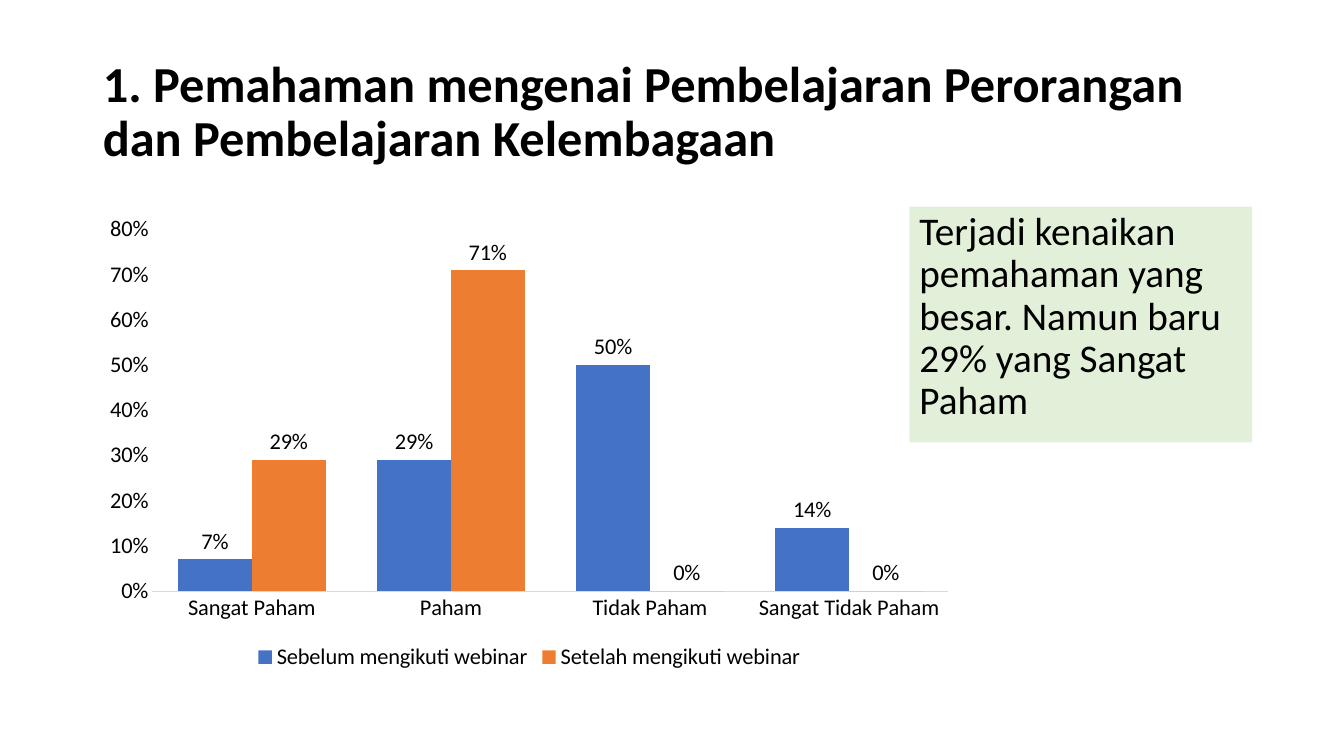
from dataclasses import dataclass

import pptx
import pptx.chart.data
import pptx.dml.color
import pptx.enum.chart
import pptx.enum.text
import pptx.oxml
import pptx.oxml.ns
import pptx.util

SLIDE_WIDTH = pptx.util.Inches(13.33)
SLIDE_HEIGHT = pptx.util.Inches(7.5)


@dataclass(frozen=True)
class Theme:
    font: str = "Calibri"
    text: str = "000000"
    note_fill: str = "E2F0D9"
    axis_line: str = "D9D9D9"
    title_size: int = 36
    note_size: int = 28
    chart_size: int = 16


@dataclass(frozen=True)
class Area:
    """A rectangle in percent of the slide's width and height."""
    left: float
    top: float
    width: float
    height: float

    def lengths(self) -> tuple[int, int, int, int]:
        return (
            round(SLIDE_WIDTH * self.left / 100),
            round(SLIDE_HEIGHT * self.top / 100),
            round(SLIDE_WIDTH * self.width / 100),
            round(SLIDE_HEIGHT * self.height / 100),
        )


@dataclass(frozen=True)
class Survey:
    name: str
    shares: tuple[float, ...]
    color: str


THEME = Theme()
TITLE_AREA = Area(6.9, 5.33, 86.27, 19.33)
CHART_AREA = Area(6.9, 27.33, 64.97, 62)
NOTE_AREA = Area(67.67, 27.33, 25.5, 31.2)

TITLE = "1. Pemahaman mengenai Pembelajaran Perorangan dan Pembelajaran Kelembagaan"
NOTE = "Terjadi kenaikan pemahaman yang besar. Namun baru 29% yang Sangat Paham"
LEVELS = ("Sangat Paham", "Paham", "Tidak Paham", "Sangat Tidak Paham")
SURVEYS = (
    Survey("Sebelum mengikuti webinar", (0.07, 0.29, 0.5, 0.14), "4472C4"),
    Survey("Setelah mengikuti webinar", (0.29, 0.71, 0, 0), "ED7D31"),
)


def rgb(color: str) -> pptx.dml.color.RGBColor:
    return pptx.dml.color.RGBColor.from_string(color)


def style_font(font: pptx.text.text.Font, size: int, bold: bool = False) -> None:
    font.name = THEME.font
    font.size = pptx.util.Pt(size)
    font.bold = bold
    font.color.rgb = rgb(THEME.text)


def write(frame: pptx.text.text.TextFrame, text: str, size: int,
          anchor: pptx.enum.text.MSO_ANCHOR, bold: bool = False,
          space_before: int = 0) -> None:
    frame.word_wrap = True
    frame.auto_size = pptx.enum.text.MSO_AUTO_SIZE.NONE
    frame.vertical_anchor = anchor
    para = frame.paragraphs[0]
    para.alignment = pptx.enum.text.PP_ALIGN.LEFT
    para.line_spacing = 0.9
    para.space_before = pptx.util.Pt(space_before)
    span = para.add_run()
    span.text = text
    style_font(span.font, size, bold)


def add_title(page: pptx.slide.Slide) -> None:
    title = page.shapes.title
    title.left, title.top, title.width, title.height = TITLE_AREA.lengths()
    write(title.text_frame, TITLE, THEME.title_size,
          pptx.enum.text.MSO_ANCHOR.MIDDLE, bold=True)


def add_note(page: pptx.slide.Slide) -> None:
    box = page.shapes.add_textbox(*NOTE_AREA.lengths())
    box.fill.solid()
    box.fill.fore_color.rgb = rgb(THEME.note_fill)
    write(box.text_frame, NOTE, THEME.note_size,
          pptx.enum.text.MSO_ANCHOR.TOP, space_before=10)


def clear_background(chart: pptx.chart.chart.Chart) -> None:
    """Let the note show through where the chart frame overlaps it."""
    blank = pptx.oxml.parse_xml(
        f"<c:spPr {pptx.oxml.ns.nsdecls('c', 'a')}>"
        "<a:noFill/><a:ln><a:noFill/></a:ln></c:spPr>"
    )
    chart.element.find(pptx.oxml.ns.qn("c:chart")).addnext(blank)


def style_axes(chart: pptx.chart.chart.Chart) -> None:
    for axis in (chart.category_axis, chart.value_axis):
        axis.has_major_gridlines = False
        axis.major_tick_mark = pptx.enum.chart.XL_TICK_MARK.NONE
        axis.minor_tick_mark = pptx.enum.chart.XL_TICK_MARK.NONE
        style_font(axis.tick_labels.font, THEME.chart_size)
    levels_line = chart.category_axis.format.line
    levels_line.color.rgb = rgb(THEME.axis_line)
    levels_line.width = pptx.util.Pt(0.75)
    shares = chart.value_axis
    shares.minimum_scale, shares.maximum_scale, shares.major_unit = 0, 0.8, 0.1
    shares.format.line.fill.background()
    shares.tick_labels.number_format = "0%"
    shares.tick_labels.number_format_is_linked = False


def style_bars(series: pptx.chart.series.BarSeries, color: str) -> None:
    series.format.fill.solid()
    series.format.fill.fore_color.rgb = rgb(color)
    series.invert_if_negative = False
    labels = series.data_labels
    labels.show_value = True
    labels.position = pptx.enum.chart.XL_LABEL_POSITION.OUTSIDE_END
    labels.number_format = "0%"
    labels.number_format_is_linked = False
    style_font(labels.font, THEME.chart_size)


def add_survey_chart(page: pptx.slide.Slide) -> None:
    data = pptx.chart.data.CategoryChartData(number_format="0%")
    data.categories = LEVELS
    for survey in SURVEYS:
        data.add_series(survey.name, survey.shares)
    chart = page.shapes.add_chart(
        pptx.enum.chart.XL_CHART_TYPE.COLUMN_CLUSTERED,
        *CHART_AREA.lengths(), data,
    ).chart
    clear_background(chart)
    style_font(chart.font, THEME.chart_size)
    chart.has_title = False
    chart.has_legend = True
    chart.legend.position = pptx.enum.chart.XL_LEGEND_POSITION.BOTTOM
    chart.legend.include_in_layout = False
    style_font(chart.legend.font, THEME.chart_size)
    style_axes(chart)
    plot = chart.plots[0]
    plot.vary_by_categories = False
    plot.gap_width = 70
    plot.overlap = 0
    for series, survey in zip(plot.series, SURVEYS):
        style_bars(series, survey.color)


def main() -> None:
    deck = pptx.Presentation()
    deck.slide_width, deck.slide_height = SLIDE_WIDTH, SLIDE_HEIGHT
    page = deck.slides.add_slide(deck.slide_layouts.get_by_name("Title Only"))
    add_title(page)
    add_note(page)
    add_survey_chart(page)
    deck.save("out.pptx")


if __name__ == "__main__":
    main()
